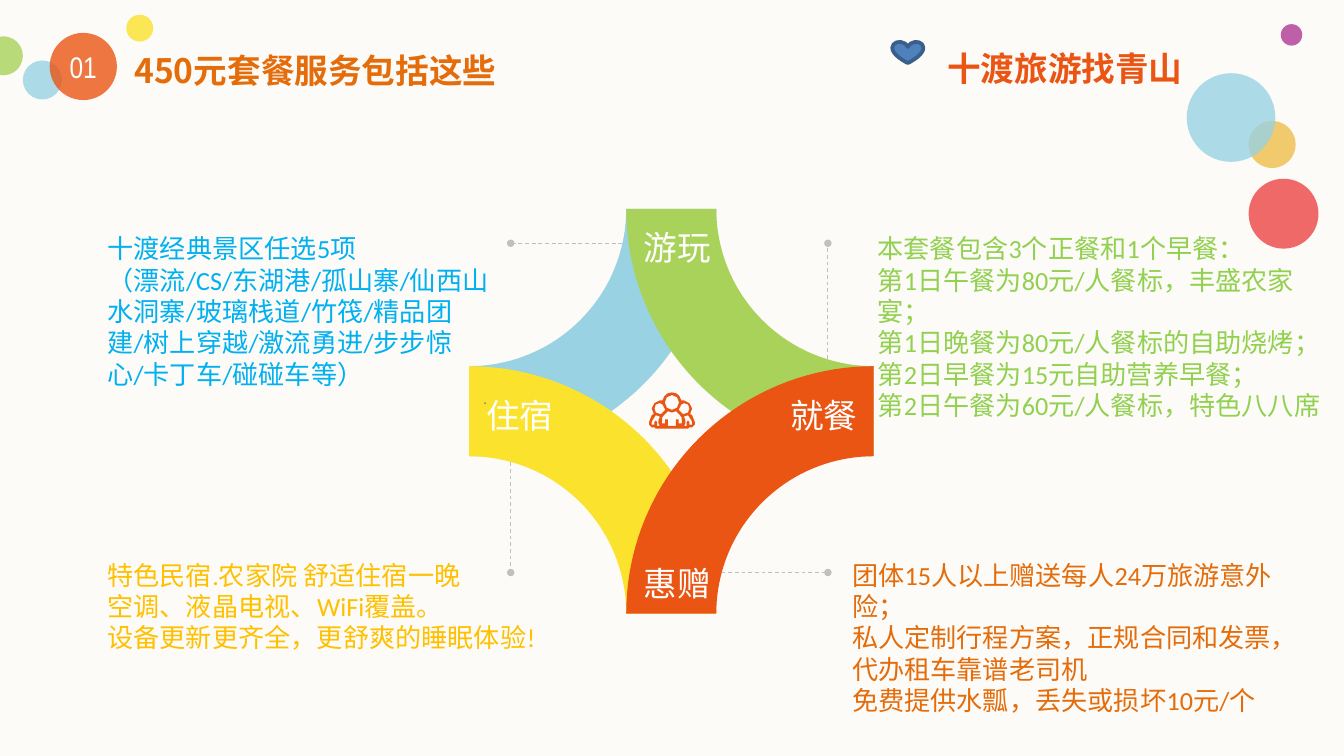
from math import cos, pi, sin

from lxml.etree import SubElement
from pptx import Presentation
from pptx.dml.color import RGBColor
from pptx.enum.dml import MSO_LINE
from pptx.enum.shapes import MSO_CONNECTOR, MSO_SHAPE
from pptx.enum.text import MSO_AUTO_SIZE, PP_ALIGN
from pptx.oxml.ns import qn
from pptx.util import Inches, Pt

COLS, ROWS = 100, 56.25
CELL = Inches(10) / COLS
CX, CY, ARM = 49.95, 30.6, 15.05
OUTER, INNER = 18.4, 11.7
COLORS = {
    "paper": "FCFBF7", "white": "FFFFFF", "grey": "C0C0C0", "dot": "7F7F7F",
    "blue": "98D2E3", "yellow": "FBE22D", "green": "A9D25A", "orange": "EA5514",
    "purple": "B03896", "gold": "F0CA6C", "red": "EB4544",
    "heart": "4F81BD", "heart_line": "3A5F8C", "title": "E46C0A",
    "play": "00B0F0", "meal": "92D050", "stay": "FFC000",
}
PETALS = [("blue", -1, -1), ("yellow", -1, 1), ("green", 1, -1), ("orange", 1, 1)]
LEADERS = [(46.3, 18.1, 38, 18.1), (38, 34.4, 38, 42.6),
           (53.7, 42.6, 61.6, 42.6), (61.6, 26.7, 61.6, 18.1)]
LEFT_BUBBLES = [(9.4, 1.1, 2, "yellow", 80), (-1.2, 2.7, 2.9, "green", 80),
                (1.7, 4.5, 2.9, "blue", 80), (3.7, 2.45, 5, "orange", 80)]
RIGHT_BUBBLES = [(95.3, 1.8, 1.6, "purple", 80), (92.9, 9, 3.5, "gold", 100),
                 (92.9, 13.3, 5.2, "red", 80), (88.3, 5.45, 6.6, "blue", 80)]
LABELS = [("游玩", 46.9, 16.4), ("就餐", 57.8, 28.9),
          ("住宿", 35.2, 28.9), ("惠赠", 46.9, 41.4)]
NOTES = [
    ((65.3, 17.3, 34.7, 11.8), "meal", [
        "本套餐包含3个正餐和1个早餐：",
        "第1日午餐为80元/人餐标，丰盛农家宴；",
        "第1日晚餐为80元/人餐标的自助烧烤；第2日早餐为15元自助营养早餐；",
        "第2日午餐为60元/人餐标，特色八八席"]),
    ((63.4, 41.6, 34.8, 11.8), "title", [
        "团体15人以上赠送每人24万旅游意外险；",
        "私人定制行程方案，正规合同和发票，代办租车靠谱老司机",
        "免费提供水瓢，丢失或损坏10元/个"]),
    ((8, 17.3, 28.5, 13.1), "play", [
        "十渡经典景区任选5项",
        "（漂流/CS/东湖港/孤山寨/仙西山水洞寨/玻璃栈道/竹筏/精品团建/树上穿越/激流勇进/步步惊心/卡丁车/碰碰车等）"]),
    ((8, 41.6, 32.4, 7.1), "stay", [
        "特色民宿.农家院 舒适住宿一晚",
        "空调、液晶电视、WiFi覆盖。",
        "设备更新更齐全，更舒爽的睡眠体验!"]),
]
ICON_HALVES = [
    [(0, 0), (.3, .06), (.55, .26), (.7, .6), (.9, .6), (1.3, .8), (1.5, 1.2),
     (1.35, 1.6), (1.5, 1.7), (1.7, 2.2), (1.7, 2.4), (1.5, 2.6), (1.3, 2.6), (1.2, 2.7)],
    [(0, 1.5), (.3, 1.4), (.6, 1.7), (.72, 1.85), (.75, 2.3), (.5, 2.3),
     (.5, 2), (.3, 2), (.3, 2.5)],
    [(0, .2), (.38, .36), (.53, .75), (.38, 1.14), (0, 1.3)],
]
ICON_SIDE = [
    [(.7, .9), (.9, .8), (1.2, .9), (1.3, 1.2), (1.2, 1.5), (.9, 1.6),
     (.8, 1.6), (.5, 1.3)],
    [(1.1, 2.5), (1.1, 2.2), (1.2, 2.1), (1.3, 2.2), (1.3, 2.4), (1.5, 2.4),
     (1.5, 2.2), (1.4, 2), (1.2, 1.7), (.9, 1.8), (1, 2.1), (1, 2.3), (.9, 2.5)],
]


def grid(*values):
    """Turn grid cells into lengths."""
    return [round(v * CELL) for v in values]


def rgb(name):
    """Look up a colour."""
    return RGBColor.from_string(COLORS[name])


def paint(sp, color, opacity=100):
    """Give a shape a flat fill without line or shadow."""
    sp.shadow.inherit = False
    sp.fill.solid()
    sp.fill.fore_color.rgb = rgb(color)
    sp.line.fill.background()
    if opacity < 100:
        clr = sp.fill._xPr.find(qn("a:solidFill"))[0]
        SubElement(clr, qn("a:alpha"), val=str(opacity * 1000))


def add_outline(s, contours, color):
    """Draw closed contours as one filled freeform."""
    first, *others = [[grid(*pt) for pt in contour] for contour in contours]
    fb = s.shapes.build_freeform(*first[0])
    fb.add_line_segments(first[1:], close=True)
    for contour in others:
        fb.move_to(*contour[0])
        fb.add_line_segments(contour[1:], close=True)
    paint(fb.convert_to_shape(), color)


def add_petal(s, color, dx, dy):
    """Draw a quarter ring around one corner of the centre figure."""
    x, y = CX + dx * ARM, CY + dy * ARM
    angles = [i * pi / 80 for i in range(41)]
    outer = [(x - dx * OUTER * cos(a), y - dy * OUTER * sin(a)) for a in angles]
    inner = [(x - dx * INNER * cos(a), y - dy * INNER * sin(a)) for a in reversed(angles)]
    add_outline(s, [outer + inner], color)


def add_people_icon(s):
    """Draw the symmetric group icon at the centre."""
    whole = [half + [(-x, y) for x, y in reversed(half)] for half in ICON_HALVES]
    sides = [[(side * x, y) for x, y in part] for part in ICON_SIDE for side in (-1, 1)]
    add_outline(s, [[(50 + x, 29.2 + y) for x, y in c] for c in whole + sides], "orange")


def add_leader(s, *ends):
    """Draw a dashed line that ends in a small dot."""
    cn = s.shapes.add_connector(MSO_CONNECTOR.STRAIGHT, *grid(*ends))
    cn.line.color.rgb = rgb("grey")
    cn.line.width = Pt(0.5)
    cn.line.dash_style = MSO_LINE.DASH
    SubElement(cn.line._get_or_add_ln(), qn("a:tailEnd"), type="oval", w="sm", len="sm")
    SubElement(cn._element.spPr, qn("a:effectLst"))


def add_bubble(s, x, y, size, color, opacity):
    """Draw a round decoration."""
    sp = s.shapes.add_shape(MSO_SHAPE.OVAL, *grid(x, y, size, size))
    paint(sp, color, opacity)


def style(p, size, color, font="Calibri", bold=False, align=PP_ALIGN.LEFT):
    """Set font, alignment and punctuation rule of a paragraph."""
    p.alignment = align
    p._p.get_or_add_pPr().set("hangingPunct", "0")
    p.font.size, p.font.name, p.font.bold = Pt(size), font, bold
    p.font.color.rgb = rgb(color)


def add_text(s, box, lines, size, color, inset=False, **look):
    """Add a text box; inset boxes keep margins and do not wrap."""
    tf = s.shapes.add_textbox(*grid(*box)).text_frame
    tf.word_wrap = not inset
    tf.auto_size = MSO_AUTO_SIZE.SHAPE_TO_FIT_TEXT
    if not inset:
        tf.margin_left = tf.margin_right = tf.margin_top = tf.margin_bottom = 0
    for i, line in enumerate(lines):
        p = tf.add_paragraph() if i else tf.paragraphs[0]
        p.add_run().text = line
        style(p, size, color, **look)
    return tf


def add_heart(s):
    """Draw the heart beside the slogan."""
    sp = s.shapes.add_shape(MSO_SHAPE.HEART, *grid(66.4, 3.1, 2.3, 1.6))
    paint(sp, "heart")
    sp.line.color.rgb = rgb("heart_line")
    sp.line.width = Pt(2)


def main():
    """Build the package slide."""
    prs = Presentation()
    prs.slide_width, prs.slide_height = grid(COLS, ROWS)
    s = prs.slides.add_slide(prs.slide_layouts[6])
    s.background.fill.solid()
    s.background.fill.fore_color.rgb = rgb("paper")
    for petal in PETALS:
        add_petal(s, *petal)
    add_people_icon(s)
    for ends in LEADERS:
        add_leader(s, *ends)
    for bubble in LEFT_BUBBLES:
        add_bubble(s, *bubble)
    add_text(s, (4.4, 3.6, 3.6, 2.7), ["01"], 16, "white",
             font="Arial Narrow", align=PP_ALIGN.CENTER)
    add_text(s, (10, 3.7, 30.4, 3), ["450元套餐服务包括这些"], 18, "title",
             font="Noto Sans CJK JP", bold=True)
    for text, x, y in LABELS:
        add_text(s, (x, y, 7.1, 4), [text], 18, "white", inset=True)
    for bubble in RIGHT_BUBBLES:
        add_bubble(s, *bubble)
    add_text(s, (69.5, 3.1, 20.3, 4), ["十渡旅游找青山"], 18, "orange", inset=True, bold=True)
    add_heart(s)
    for box, color, lines in NOTES:
        tf = add_text(s, box, lines, 14, color)
        if color == "play":
            p = tf.add_paragraph()
            p.add_run().text = ". "
            style(p, 8, "dot", align=PP_ALIGN.RIGHT)
    prs.save("out.pptx")


if __name__ == "__main__":
    main()
